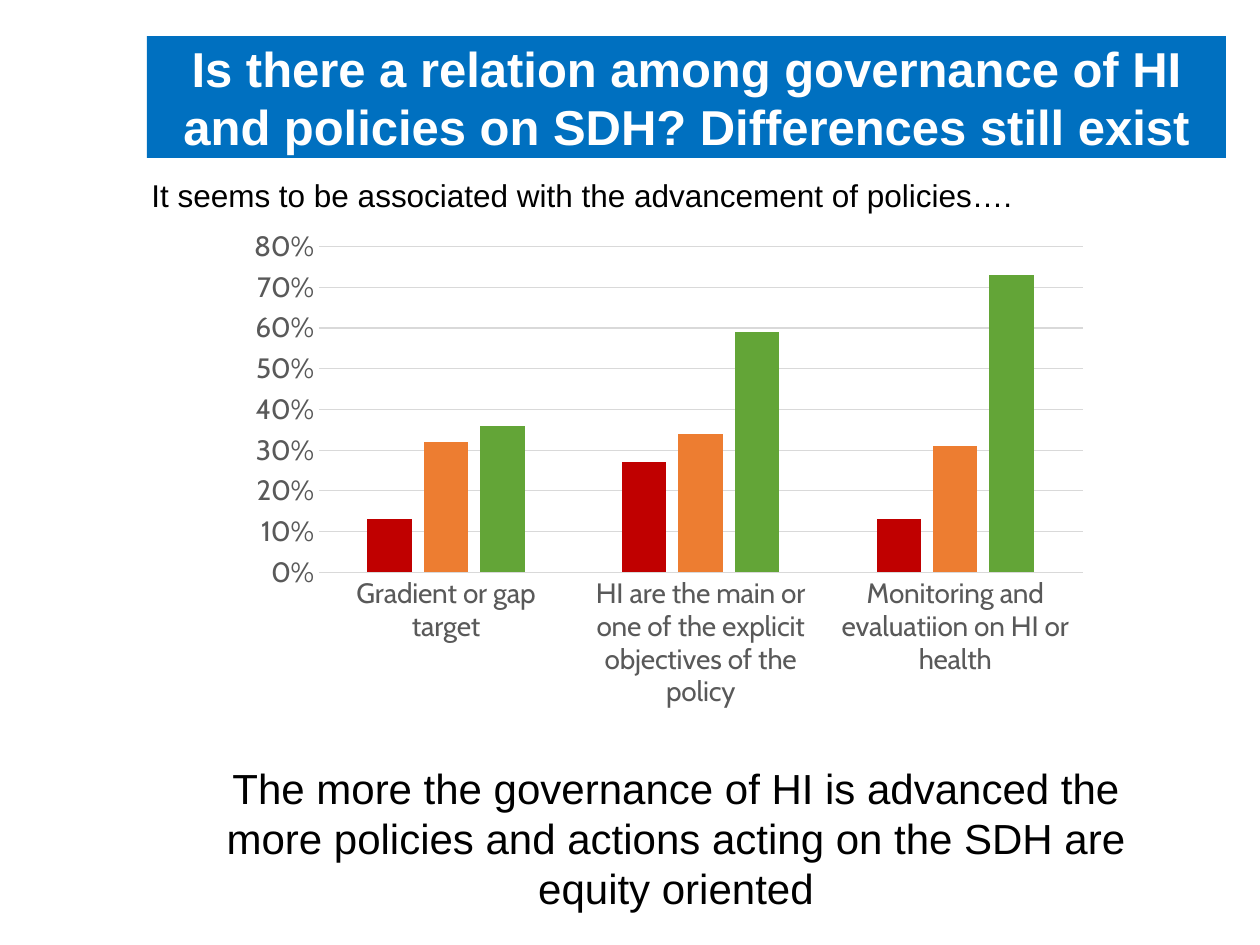
from dataclasses import dataclass

from lxml import etree
from pptx import Presentation, util as u
from pptx.chart import data as chart_data
from pptx.dml.color import RGBColor
from pptx.enum import chart as ch, text as t
from pptx.oxml.ns import qn


@dataclass(frozen=True)
class Theme:
    banner: str = "0070C0"
    white: str = "FFFFFF"
    ink: str = "000000"
    axis_text: str = "595959"
    grid: str = "D9D9D9"
    text_font: str = "Arial"
    chart_font: str = "Cabin"
    title_size: int = 28
    lead_size: int = 18
    axis_size: int = 16
    closing_size: int = 24


THEME = Theme()
EMU_PER_PX = 914400 // 126

# Content
TITLE = ("Is there a relation among governance of HI and policies on SDH? "
         "Differences still exist")
LEAD = "It seems to be associated with the advancement of policies…."
CLOSING = ("The more the governance of HI is advanced the more policies and "
           "actions acting on the SDH are equity oriented")
CATEGORIES = ["Gradient or gap target",
              "HI are the main or one of the explicit objectives of the policy",
              "Monitoring and evaluatiion on HI or health"]
SERIES = [("C", (0.13, 0.27, 0.13), "C00000"),
          ("B", (0.32, 0.34, 0.31), "ED7D31"),
          ("A", (0.36, 0.59, 0.73), "63A537")]

# Left, top, width, height in px
TITLE_AREA = (147, 36, 1079, 122)
LEAD_AREA = (139, 170, 1113, 50)
CHART_AREA = (232, 220, 868, 534)
CLOSING_AREA = (179, 756, 994, 165)
PLOT_FRACTIONS = {"x": 0.1, "y": 0.05, "w": 0.88, "h": 0.61}
PLOT_FRACTIONS = {"x": 0.1, "y": 0.05, "w": 0.88, "h": 0.61}


def emu(area):
    return [u.Emu(px * EMU_PER_PX) for px in area]


def color(value):
    return RGBColor.from_string(value)


def style_font(font, name, size, value, bold=False):
    font.name, font.size, font.bold = name, u.Pt(size), bold
    font.color.rgb = color(value)


def write(box, words, size, value, align, bold=False):
    frame = box.text_frame
    frame.word_wrap = True
    frame.auto_size = t.MSO_AUTO_SIZE.NONE
    para = frame.paragraphs[0]
    para.alignment = align
    span = para.add_run()
    span.text = words
    style_font(span.font, THEME.text_font, size, value, bold)


def add_text(page, area, words, size, align):
    box = page.shapes.add_textbox(*emu(area))
    write(box, words, size, THEME.ink, align)


def add_title(page):
    title = page.shapes.title
    title.left, title.top, title.width, title.height = emu(TITLE_AREA)
    title.fill.solid()
    title.fill.fore_color.rgb = color(THEME.banner)
    title.text_frame.vertical_anchor = t.MSO_ANCHOR.MIDDLE
    write(title, TITLE, THEME.title_size, THEME.white, t.PP_ALIGN.CENTER, True)


def place_plot(chart):
    """Fix the inner plot area as fractions of the chart."""
    plot_area = chart.plots[0]._element.getparent()
    for old in plot_area.findall(qn("c:layout")):
        plot_area.remove(old)
    layout = etree.Element(qn("c:layout"))
    plot_area.insert(0, layout)
    manual = etree.SubElement(layout, qn("c:manualLayout"))
    settings = [("layoutTarget", "inner"), ("xMode", "edge"), ("yMode", "edge")]
    for tag, value in settings + list(PLOT_FRACTIONS.items()):
        etree.SubElement(manual, qn(f"c:{tag}")).set("val", str(value))


def add_policy_chart(page):
    data = chart_data.CategoryChartData(number_format="0%")
    data.categories = CATEGORIES
    for name, values, _ in SERIES:
        data.add_series(name, values)
    chart = page.shapes.add_chart(
        ch.XL_CHART_TYPE.COLUMN_CLUSTERED, *emu(CHART_AREA), data).chart
    chart.has_legend = chart.has_title = False
    style_font(chart.font, THEME.chart_font, THEME.axis_size, THEME.axis_text)

    # Columns
    plot = chart.plots[0]
    plot.gap_width, plot.overlap = 219, -27
    plot.vary_by_categories = False
    for series, (_, _, fill) in zip(plot.series, SERIES):
        series.format.fill.solid()
        series.format.fill.fore_color.rgb = color(fill)

    # Axes and gridlines
    values, categories = chart.value_axis, chart.category_axis
    for axis in (values, categories):
        axis.major_tick_mark = axis.minor_tick_mark = ch.XL_TICK_MARK.NONE
        style_font(axis.tick_labels.font, THEME.chart_font,
                   THEME.axis_size, THEME.axis_text)
    values.minimum_scale, values.maximum_scale, values.major_unit = 0, 0.8, 0.1
    values.tick_labels.number_format = "0%"
    values.tick_labels.number_format_is_linked = False
    values.format.line.fill.background()
    values.has_major_gridlines = True
    for line in (values.major_gridlines.format.line, categories.format.line):
        line.color.rgb = color(THEME.grid)
        line.width = u.Pt(0.75)
    place_plot(chart)


def main():
    deck = Presentation()
    deck.slide_width, deck.slide_height = u.Inches(10), u.Inches(7.5)
    page = deck.slides.add_slide(deck.slide_layouts.get_by_name("Title Only"))
    add_title(page)
    add_text(page, LEAD_AREA, LEAD, THEME.lead_size, t.PP_ALIGN.LEFT)
    add_policy_chart(page)
    add_text(page, CLOSING_AREA, CLOSING, THEME.closing_size, t.PP_ALIGN.CENTER)
    deck.save("out.pptx")


if __name__ == "__main__":
    main()
